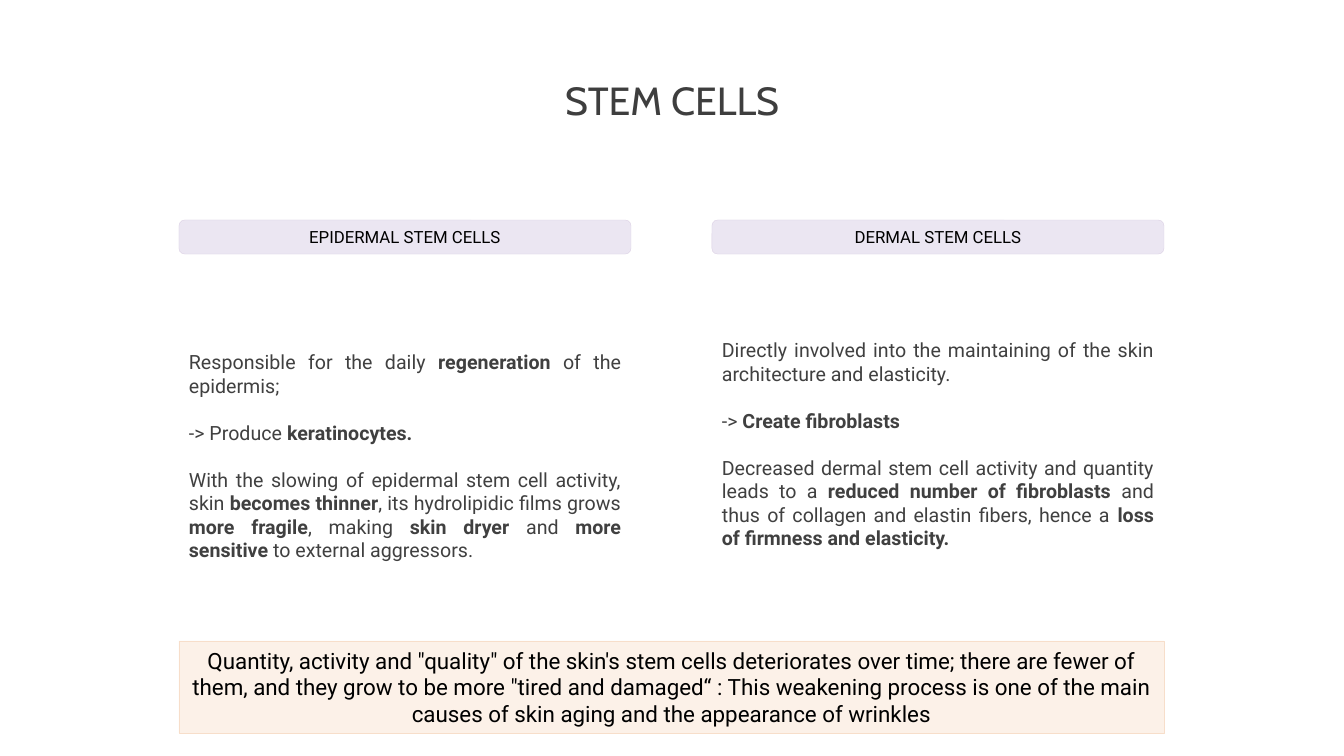
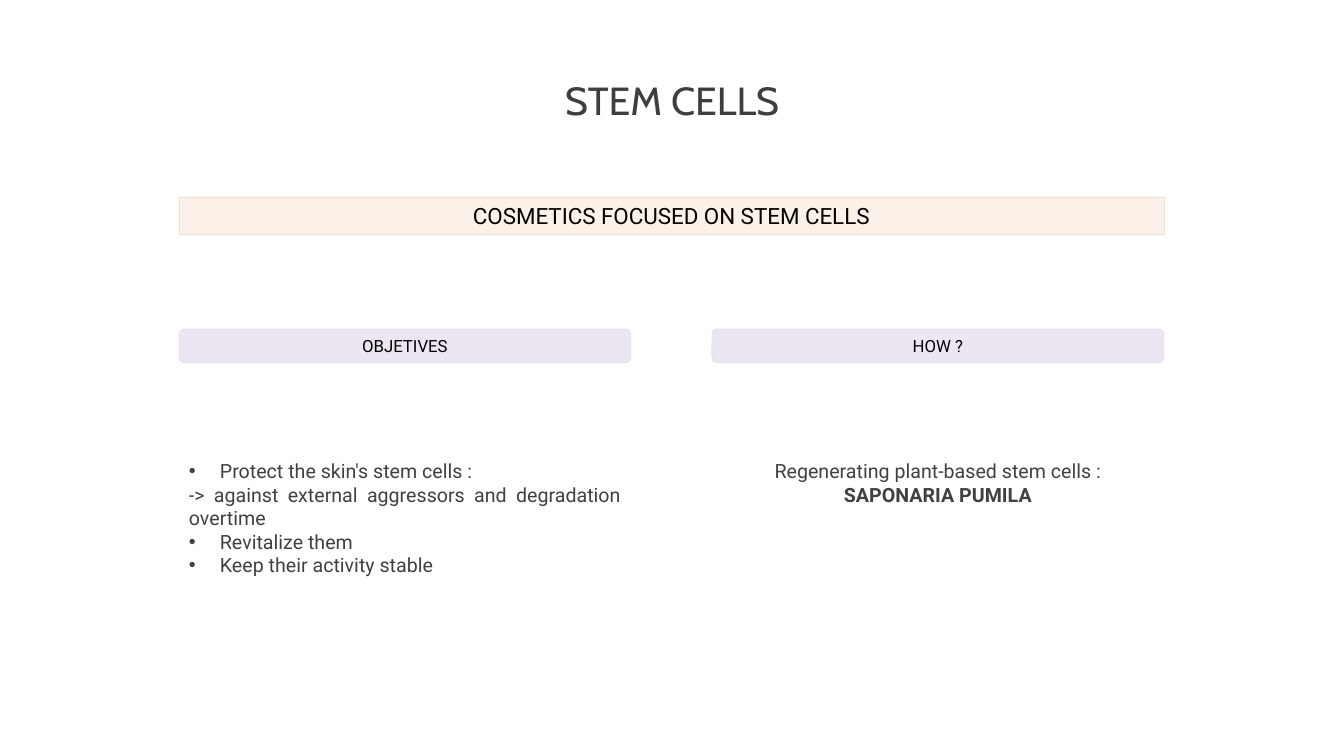
import pptx
import pptx.util
import pptx.dml.color
import pptx.enum.shapes
import pptx.enum.text
import pptx.oxml.ns
import lxml.etree

PX = 914400 / 100.8
SLIDE_W, SLIDE_H = 1344, 756
LEFT, CONTENT_W, COLUMN_W = 179, 985, 452
COLUMN_LEFTS = (LEFT, LEFT + CONTENT_W - COLUMN_W)
HEADING_H = 34
BULLET_INDENT = 31

RGB = pptx.dml.color.RGBColor
TITLE_GREY = RGB(0x3E, 0x3E, 0x3E)
BODY_GREY = RGB(0x40, 0x40, 0x40)
BLACK = RGB(0x00, 0x00, 0x00)
LILAC, LILAC_EDGE = RGB(0xEB, 0xE6, 0xF2), RGB(0xDA, 0xCF, 0xE3)
PEACH, PEACH_EDGE = RGB(0xFC, 0xF1, 0xE8), RGB(0xF7, 0xDE, 0xCA)

Pt = pptx.util.Pt
ALIGN = pptx.enum.text.PP_ALIGN
ANCHOR = pptx.enum.text.MSO_ANCHOR
SHAPE = pptx.enum.shapes.MSO_SHAPE
PARAGRAPH_GAP = Pt(16.8)


def write(frame, paragraphs, font, size, color, align, gap=0):
    """Fill a text frame; runs in a paragraph alternate regular and bold, "•" first makes a bullet."""
    frame.word_wrap = True
    for number, runs in enumerate(paragraphs):
        paragraph = frame.paragraphs[0] if number == 0 else frame.add_paragraph()
        if runs[0] == "•":
            runs = runs[1:]
            properties = paragraph._p.get_or_add_pPr()
            properties.set("marL", str(round(BULLET_INDENT * PX)))
            properties.set("indent", str(-round(BULLET_INDENT * PX)))
            for tag, key, value in (("a:buFont", "typeface", "Arial"), ("a:buChar", "char", "•")):
                lxml.etree.SubElement(properties, pptx.oxml.ns.qn(tag)).set(key, value)
        paragraph.alignment = align
        if number and gap:
            paragraph.space_before = gap
        for position, text in enumerate(runs):
            if text:
                run = paragraph.add_run()
                run.text = text
                run.font.name, run.font.size = font, Pt(size)
                run.font.bold = position % 2 == 1
                run.font.color.rgb = color


def add_band(slide, preset, box, text, size, fill, edge):
    band = slide.shapes.add_shape(preset, *(round(length * PX) for length in box))
    band.shadow.inherit = False
    band.fill.solid()
    band.fill.fore_color.rgb = fill
    band.line.color.rgb = edge
    band.line.width = Pt(0.25)
    band.text_frame.vertical_anchor = ANCHOR.MIDDLE
    write(band.text_frame, [(text,)], "Roboto", size, BLACK, ALIGN.CENTER)


# Each column: heading, top and height of its text, alignment, paragraphs
SLIDES = [
    {
        "banner": (641, 92, "Quantity, activity and \"quality\" of the skin's stem cells deteriorates over time; "
                   "there are fewer of them, and they grow to be more \"tired and damaged“ : This weakening "
                   "process is one of the main causes of skin aging and the appearance of wrinkles"),
        "heading_top": 220,
        "gap": PARAGRAPH_GAP,
        "columns": [
            ("EPIDERMAL STEM CELLS", 345, 271, ALIGN.JUSTIFY, [
                ("Responsible for the daily ", "regeneration", " of the epidermis;"),
                ("-> Produce ", "keratinocytes."),
                ("With the slowing of epidermal stem cell activity, skin ", "becomes thinner",
                 ", its hydrolipidic films grows ", "more fragile", ", making ", "skin dryer ",
                 "and ", "more sensitive ", "to external aggressors."),
            ]),
            ("DERMAL STEM CELLS", 333, 224, ALIGN.JUSTIFY, [
                ("Directly involved into the maintaining of the skin architecture and elasticity.",),
                ("-> ", "Create fibroblasts "),
                ("Decreased dermal stem cell activity and quantity leads to a ",
                 "reduced number of fibroblasts ",
                 "and thus of collagen and elastin fibers, hence a ",
                 "loss of firmness and elasticity."),
            ]),
        ],
    },
    {
        "banner": (197, 37, "COSMETICS FOCUSED ON STEM CELLS"),
        "heading_top": 329,
        "gap": 0,
        "columns": [
            ("OBJETIVES", 454, 129, ALIGN.JUSTIFY, [
                ("•", "Protect the skin's stem cells :"),
                ("-> against external aggressors and degradation overtime",),
                ("•", "Revitalize them"),
                ("•", "Keep their activity stable"),
            ]),
            ("HOW ?", 454, 82, ALIGN.CENTER, [
                ("Regenerating plant-based stem cells :",),
                ("", "SAPONARIA PUMILA"),
            ]),
        ],
    },
]

deck = pptx.Presentation()
deck.slide_width, deck.slide_height = round(SLIDE_W * PX), round(SLIDE_H * PX)

for content in SLIDES:
    slide = deck.slides.add_slide(deck.slide_layouts[6])

    title = slide.shapes.add_textbox(0, round(59 * PX), deck.slide_width, round(88 * PX)).text_frame
    title.vertical_anchor = ANCHOR.MIDDLE
    write(title, [("STEM CELLS",)], "Cabin", 28, TITLE_GREY, ALIGN.CENTER)
    title.paragraphs[0].line_spacing = 0.9

    for left, (heading, top, height, align, paragraphs) in zip(COLUMN_LEFTS, content["columns"]):
        add_band(slide, SHAPE.ROUNDED_RECTANGLE, (left, content["heading_top"], COLUMN_W, HEADING_H),
                 heading, 12, LILAC, LILAC_EDGE)
        body = slide.shapes.add_textbox(*(round(length * PX) for length in (left, top, COLUMN_W, height)))
        write(body.text_frame, paragraphs, "Roboto", 14, BODY_GREY, align, content["gap"])

    banner_top, banner_height, message = content["banner"]
    add_band(slide, SHAPE.RECTANGLE, (LEFT, banner_top, CONTENT_W, banner_height),
             message, 16, PEACH, PEACH_EDGE)

deck.save("out.pptx")
